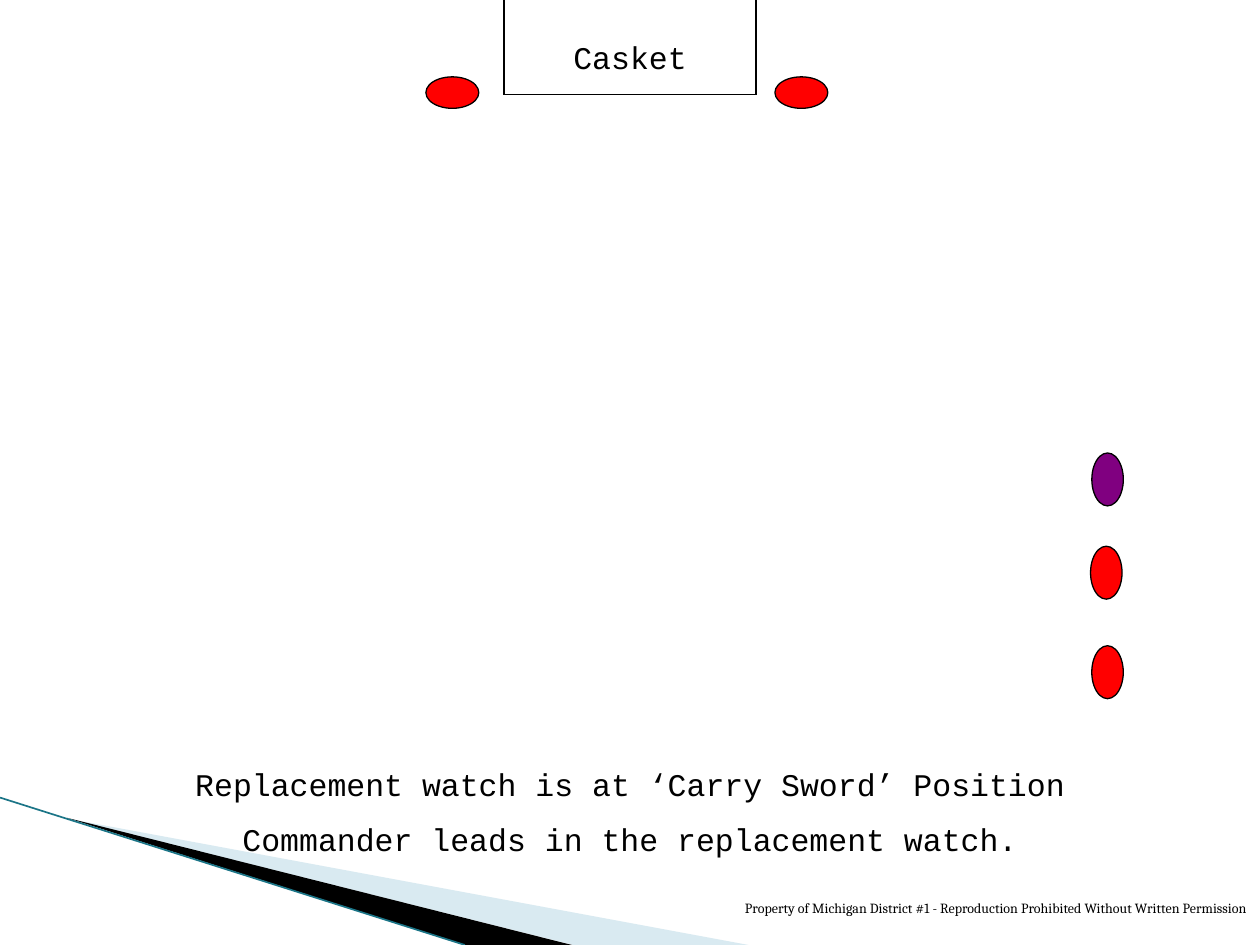
"""Build the casket watch slide on a grid of 100 columns by 75 rows."""
from lxml.etree import SubElement
from pptx import Presentation
from pptx.dml.color import RGBColor
from pptx.enum.shapes import MSO_CONNECTOR, MSO_SHAPE
from pptx.enum.text import MSO_ANCHOR, PP_ALIGN
from pptx.oxml.ns import qn
from pptx.util import Inches, Pt


def color(code):
    return RGBColor.from_string(code)


def grid(*spots):
    return [round(spot * unit) for spot in spots]


deck = Presentation()
deck.slide_width, deck.slide_height = Inches(10), Inches(7.5)
unit = deck.slide_width / 100
slide = deck.slides.add_slide(deck.slide_layouts[6])
shapes = slide.shapes

wedges = [
    ("A0CBDC", 40, [(5.5, 65), (59.4, 75), (45.5, 75)]),
    ("000000", 100, [(5.3, 64.9), (45.4, 75), (36.9, 75)]),
]
for code, alpha, spots in wedges:
    first, *rest = [grid(*spot) for spot in spots]
    pen = shapes.build_freeform(*first)
    pen.add_line_segments(rest, close=True)
    wedge = pen.convert_to_shape()
    wedge.shadow.inherit = False
    wedge.fill.solid()
    wedge.fill.fore_color.rgb = color(code)
    wedge.line.fill.background()
    if alpha < 100:
        tint = wedge.fill._xPr.find(".//" + qn("a:srgbClr"))
        SubElement(tint, qn("a:alpha")).set("val", str(alpha * 1000))

lines = [
    (0, 63.3, 36.9, 75, "1B7587", 0.95),
    (40, 7.5, 60, 7.5, "000000", 0.75),
    (40, 7.5, 40, 0, "000000", 0.75),
    (60, 7.5, 60, 0, "000000", 0.75),
]
for *ends, code, width in lines:
    edge = shapes.add_connector(MSO_CONNECTOR.STRAIGHT, *grid(*ends))
    edge.line.color.rgb = color(code)
    edge.line.width = Pt(width)
    SubElement(edge._element.spPr, qn("a:effectLst"))

guards = [
    (33.8, 6.1, 0, "FF0000"),
    (61.5, 6.1, 0, "FF0000"),
    (85.8, 36.8, 90, "800080"),
    (85.7, 44.2, 270, "FF0000"),
    (85.8, 52.1, 270, "FF0000"),
]
for left, top, turn, code in guards:
    guard = shapes.add_shape(MSO_SHAPE.OVAL, *grid(left, top, 4.2, 2.5))
    guard.shadow.inherit = False
    guard.rotation = turn
    guard.fill.solid()
    guard.fill.fore_color.rgb = color(code)
    guard.line.color.rgb = color("000000")
    guard.line.width = Pt(0.75)

big = {"name": "Courier New", "size": Pt(18)}
small = {"name": "Cambria", "size": Pt(8)}
labels = [
    ((42.9, 2.5, 14.2, 4), ["Casket"], big, PP_ALIGN.CENTER),
    ((10, 60.2, 80, 8.5),
     ["Replacement watch is at ‘Carry Sword’ Position",
      "Commander leads in the replacement watch."], big, PP_ALIGN.CENTER),
    ((42.5, 70.9, 57.5, 2.6),
     ["Property of Michigan District #1 - Reproduction Prohibited "
      "Without Written Permission"], small, PP_ALIGN.RIGHT),
]
for place, texts, style, align in labels:
    frame = shapes.add_textbox(*grid(*place)).text_frame
    frame.word_wrap = True
    frame.vertical_anchor = MSO_ANCHOR.TOP
    frame.text = "\n".join(texts)
    for row, para in enumerate(frame.paragraphs):
        para.alignment = align
        para.space_before = Pt(10 if row else 0)
        for key, value in style.items():
            setattr(para.font, key, value)
        para.font.color.rgb = color("000000")

deck.save("out.pptx")
